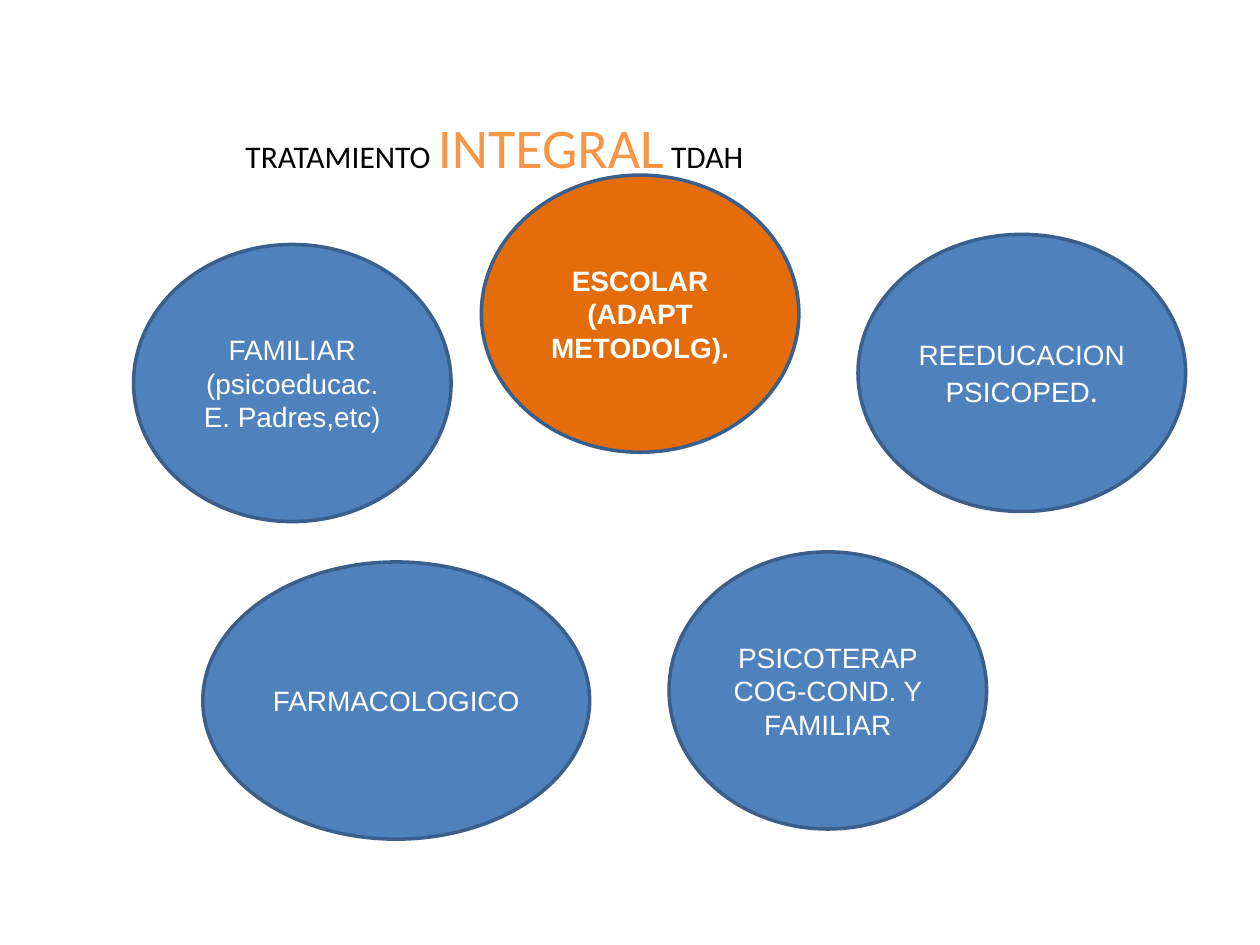
from dataclasses import dataclass

from pptx import Presentation
from pptx.dml.color import RGBColor
from pptx.enum.shapes import MSO_SHAPE
from pptx.enum.text import MSO_ANCHOR, MSO_AUTO_SIZE, PP_ALIGN
from pptx.util import Inches, Pt

SLIDE_WIDTH = Inches(10)
SLIDE_HEIGHT = Inches(7.5)


@dataclass(frozen=True)
class Theme:
    black: str = "000000"
    white: str = "FFFFFF"
    blue: str = "4F81BD"
    outline: str = "3A5F8C"
    orange: str = "E46C0A"
    accent: str = "F79646"
    title_font: str = "Calibri"
    body_font: str = "Arial"
    title_size: int = 18
    accent_size: int = 32
    body_size: int = 16
    outline_width: int = 2


THEME = Theme()


def share_box(left, top, width, height):
    return (
        int(SLIDE_WIDTH * left / 100),
        int(SLIDE_HEIGHT * top / 100),
        int(SLIDE_WIDTH * width / 100),
        int(SLIDE_HEIGHT * height / 100),
    )


def add_text(paragraph, text, *, font, size, color, bold=False):
    run = paragraph.add_run()
    run.text = text
    run.font.name = font
    run.font.size = Pt(size)
    run.font.bold = bold
    run.font.color.rgb = RGBColor.from_string(color)


def add_title(slide, box):
    frame = slide.shapes.add_textbox(*box).text_frame
    frame.word_wrap = True
    frame.auto_size = MSO_AUTO_SIZE.SHAPE_TO_FIT_TEXT
    heading = frame.paragraphs[0]
    for text, size, color in (
        ("TRATAMIENTO ", THEME.title_size, THEME.black),
        ("INTEGRAL", THEME.accent_size, THEME.accent),
        (" TDAH", THEME.title_size, THEME.black),
    ):
        add_text(heading, text, font=THEME.title_font, size=size, color=color)


def add_treatment(slide, box, lines, fill=THEME.blue, bold=False, ending=""):
    treatment = slide.shapes.add_shape(MSO_SHAPE.OVAL, *box)
    treatment.shadow.inherit = False
    treatment.fill.solid()
    treatment.fill.fore_color.rgb = RGBColor.from_string(fill)
    treatment.line.color.rgb = RGBColor.from_string(THEME.outline)
    treatment.line.width = Pt(THEME.outline_width)
    frame = treatment.text_frame
    frame.word_wrap = True
    frame.vertical_anchor = MSO_ANCHOR.MIDDLE
    for index, line in enumerate(lines):
        paragraph = frame.add_paragraph() if index else frame.paragraphs[0]
        paragraph.alignment = PP_ALIGN.CENTER
        add_text(paragraph, line, font=THEME.body_font, size=THEME.body_size,
                 color=THEME.white, bold=bold)
    if ending:
        add_text(paragraph, ending, font=THEME.title_font,
                 size=THEME.title_size, color=THEME.white)


def main():
    presentation = Presentation()
    presentation.slide_width = SLIDE_WIDTH
    presentation.slide_height = SLIDE_HEIGHT
    slide = presentation.slides.add_slide(presentation.slide_layouts[6])

    add_title(slide, share_box(18.5, 11.2, 66.7, 8.53))

    oval_width, oval_height = 25.2, 29.33
    treatments = (
        (10.6, 25.87, oval_width, ("FAMILIAR", "(psicoeducac. E. Padres,etc)"), {}),
        (68.1, 24.8, 26, ("REEDUCACION PSICOPED",), {"ending": "."}),
        (53.1, 58.4, oval_width, ("PSICOTERAP COG-COND. Y FAMILIAR",), {}),
        (16.1, 59.47, 30.7, ("FARMACOLOGICO",), {}),
        (38.2, 18.53, oval_width, ("ESCOLAR", "(ADAPT METODOLG)."),
         {"fill": THEME.orange, "bold": True}),
    )
    for left, top, width, lines, style in treatments:
        add_treatment(slide, share_box(left, top, width, oval_height), lines, **style)

    presentation.save("out.pptx")


if __name__ == "__main__":
    main()
